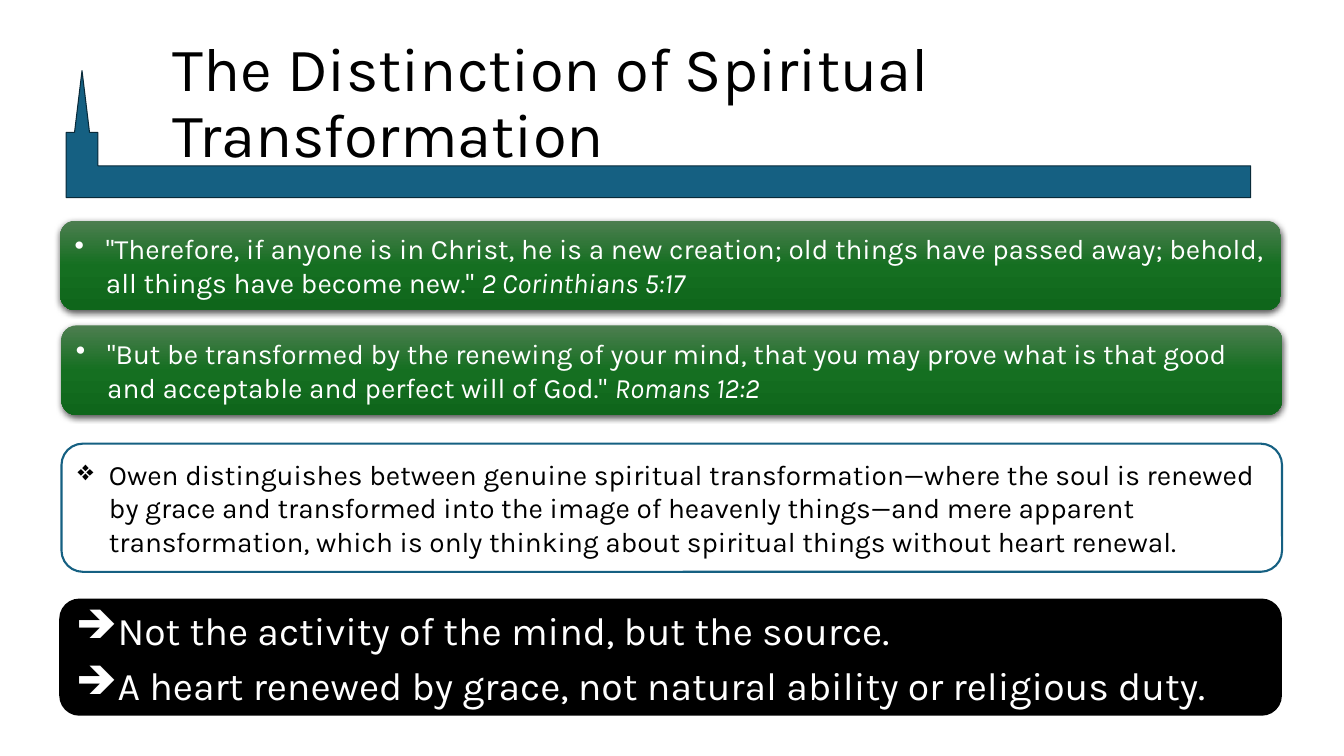
"""Build the slide on the distinction of spiritual transformation."""
from lxml import etree
from pptx import Presentation
from pptx.dml.color import RGBColor
from pptx.enum.shapes import MSO_SHAPE
from pptx.enum.text import MSO_ANCHOR, PP_ALIGN
from pptx.oxml.ns import qn
from pptx.util import Cm, Pt

STEEPLE = MSO_SHAPE.BENT_UP_ARROW
ROUNDED = MSO_SHAPE.ROUNDED_RECTANGLE
MIDDLE = MSO_ANCHOR.MIDDLE
LEFT = PP_ALIGN.LEFT

THEME = {
    "font": "Karla", "white": "FFFFFF", "black": "000000",
    "blue": "156082", "navy": "092A39",
    "green": ((0, "4D7E50"), (50, "156F21"), (100, "0F661B")),
    "title": 44, "body": 20, "large": 28,
}
TITLE = "The Distinction of Spiritual Transformation"
STEEPLE_BOX = (1.88, 1.78, 29.64, 3.2)
STEEPLE_ADJUSTMENTS = (0.25, 0.059, 0.487)
TITLE_BOX = (4.11, 1.04, 27.43, 3.2)
PANEL_WIDTH = 30.76

STYLES = {
    "verse": {"fill": "green", "line": None, "text": "white", "size": "body",
              "bullet": "•", "indent": 0.79},
    "note": {"fill": "white", "line": "blue", "text": "black", "size": "body",
             "bullet": "❖", "indent": 0.79},
    "summary": {"fill": "black", "line": "black", "text": "white", "size": "large",
                "bullet": "➔", "indent": 0.97},
}
PANELS = [
    ("verse", 1.52, 5.56, 2.26, [
        ('"Therefore, if anyone is in Christ, he is a new creation; old things have '
         'passed away; behold, all things have become new." ', "2 Corinthians 5:17")]),
    ("verse", 1.55, 8.2, 2.26, [
        ('"But be transformed by the renewing of your mind, that you may prove what is '
         'that good and acceptable and perfect will of God." ', "Romans 12:2")]),
    ("note", 1.55, 11.18, 3.23, [
        ("Owen distinguishes between genuine spiritual transformation—where the soul is "
         "renewed by grace and transformed into the image of heavenly things—and mere "
         "apparent transformation, which is only thinking about spiritual things without "
         "heart renewal.",)]),
    ("summary", 1.52, 15.11, 2.9, [
        ("Not the activity of the mind, but the source.",),
        ("A heart renewed by grace, not natural ability or religious duty.",)]),
]


def color(name):
    return RGBColor.from_string(THEME[name])


def apply(target, values):
    for name, value in values.items():
        setattr(target, name, value)


def add_shape(slide, kind, box, line, weight):
    shape = slide.shapes.add_shape(kind, *map(Cm, box))
    shape.shadow.inherit = False
    if line:
        shape.line.color.rgb = color(line)
        shape.line.width = Pt(weight)
    else:
        shape.line.fill.background()
    return shape


def fill_solid(shape, name):
    shape.fill.solid()
    shape.fill.fore_color.rgb = color(name)


def fill_gradient(shape, name):
    shape.fill.gradient()
    shape.fill.gradient_angle = 270
    stops = shape._element.spPr.find(".//" + qn("a:gsLst"))
    for stop in list(stops):
        stops.remove(stop)
    for position, value in THEME[name]:
        stop = etree.SubElement(stops, qn("a:gs"), pos=str(position * 1000))
        etree.SubElement(stop, qn("a:srgbClr"), val=value)


def add_shadow(shape):
    effects = shape._element.spPr.find(qn("a:effectLst"))
    shadow = etree.SubElement(effects, qn("a:outerShdw"), blurRad=str(Pt(4.5)),
                              dist=str(Pt(1.5)), dir="5400000", rotWithShape="0")
    tint = etree.SubElement(shadow, qn("a:srgbClr"), val=THEME["black"])
    etree.SubElement(tint, qn("a:alpha"), val="63000")


def add_run(paragraph, text, size, text_color, italic=False):
    run = paragraph.add_run()
    run.text = text
    apply(run.font, {"name": THEME["font"], "size": Pt(THEME[size]), "italic": italic})
    run.font.color.rgb = color(text_color)


def add_bullet(paragraph, bullet, indent):
    properties = paragraph._p.get_or_add_pPr()
    properties.set("marL", str(Cm(indent)))
    properties.set("indent", str(-Cm(indent)))
    etree.SubElement(properties, qn("a:buChar"), char=bullet)


def add_panel(slide, style_name, left, top, height, lines):
    style = STYLES[style_name]
    shape = add_shape(slide, ROUNDED, (left, top, PANEL_WIDTH, height), style["line"], 1.5)
    if style["fill"] == "green":
        fill_gradient(shape, "green")
        add_shadow(shape)
    else:
        fill_solid(shape, style["fill"])
    frame = shape.text_frame
    apply(frame, {"word_wrap": True, "vertical_anchor": MIDDLE})
    for index, parts in enumerate(lines):
        paragraph = frame.add_paragraph() if index else frame.paragraphs[0]
        add_bullet(paragraph, style["bullet"], style["indent"])
        paragraph.alignment = LEFT
        if index:
            paragraph.space_before = Pt(6)
        for position, text in enumerate(parts):
            add_run(paragraph, text, style["size"], style["text"], position > 0)


def add_steeple(slide):
    steeple = add_shape(slide, STEEPLE, STEEPLE_BOX, "navy", 0.75)
    fill_solid(steeple, "blue")
    for index, value in enumerate(STEEPLE_ADJUSTMENTS):
        steeple.adjustments[index] = value
    steeple._element.spPr.find(qn("a:xfrm")).set("flipH", "1")


def add_title(slide):
    frame = slide.shapes.add_textbox(*map(Cm, TITLE_BOX)).text_frame
    apply(frame, {"word_wrap": True, "vertical_anchor": MIDDLE})
    paragraph = frame.paragraphs[0]
    paragraph.line_spacing = 0.9
    add_run(paragraph, TITLE, "title", "black")


def main():
    presentation = Presentation()
    apply(presentation, {"slide_width": Cm(33.87), "slide_height": Cm(19.05)})
    slide = presentation.slides.add_slide(presentation.slide_layouts[6])
    add_steeple(slide)
    add_title(slide)
    for panel in PANELS:
        add_panel(slide, *panel)
    presentation.save("out.pptx")


if __name__ == "__main__":
    main()
